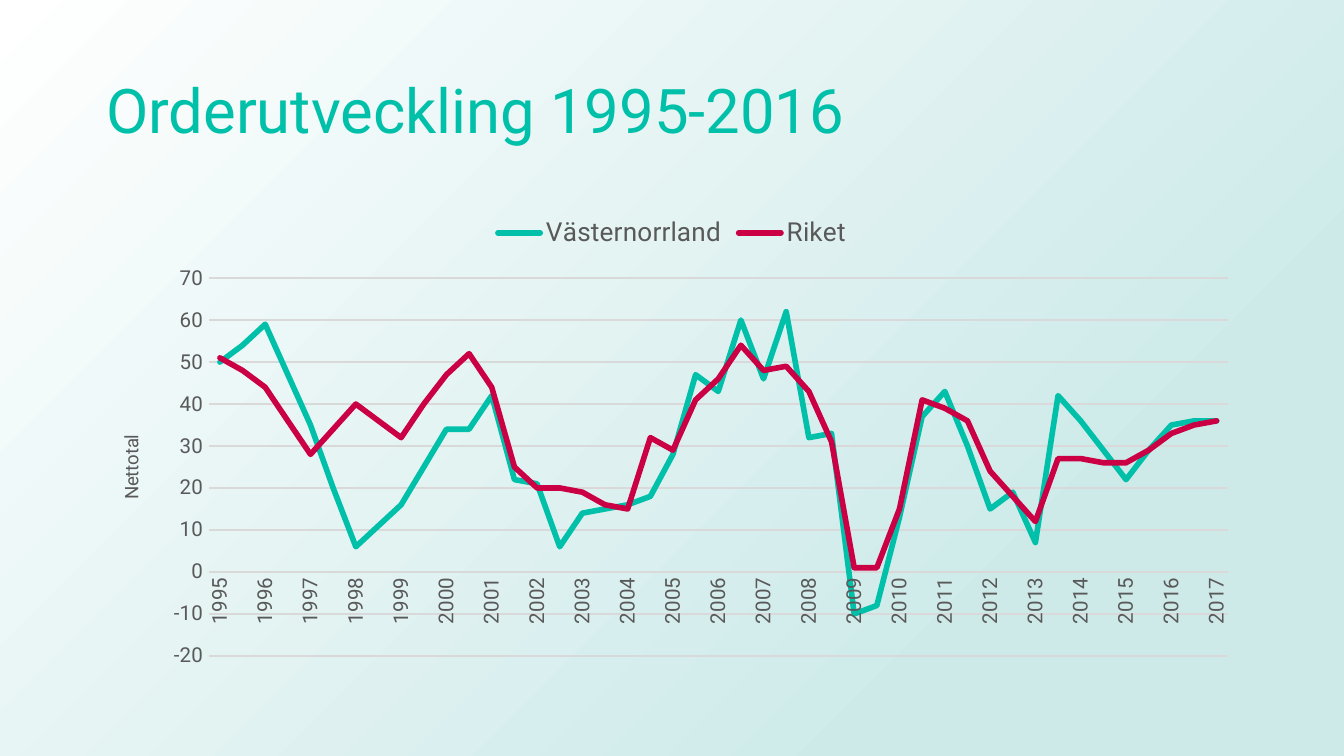
import pptx
import pptx.chart.data
import pptx.dml.color
import pptx.enum.chart
import pptx.enum.shapes
import pptx.enum.text
import pptx.oxml
import pptx.oxml.ns
import pptx.util
from pptx.util import Inches

TITLE = "Orderutveckling 1995-2016"
AXIS_TITLE = "Nettotal"
FONT = "Roboto"
TEAL, RED, GREY, GRID = "00C0A9", "CB0044", "595959", "D9D9D9"
GRADIENT = [(0.23, "CDEAE9"), (1, "FFFFFF")]
WIDTH = 10
HEIGHT = WIDTH * 9 / 16
LEFT, CONTENT_WIDTH = 0.69, 8.62

# Two values per year, the last year has one
SERIES = [
    ("Västernorrland", TEAL, [
        50, 54, 59, 47, 35, 20, 6, 11, 16, 25, 34, 34, 42, 22, 21,
        6, 14, 15, 16, 18, 28, 47, 43, 60, 46, 62, 32, 33, -10, -8,
        13, 37, 43, 30, 15, 19, 7, 42, 36, 29, 22, 29, 35, 36, 36]),
    ("Riket", RED, [
        51, 48, 44, 36, 28, 34, 40, 36, 32, 40, 47, 52, 44, 25, 20,
        20, 19, 16, 15, 32, 29, 41, 46, 54, 48, 49, 43, 31, 1, 1,
        15, 41, 39, 36, 24, 18, 12, 27, 27, 26, 26, 29, 33, 35, 36]),
]
YEARS = [str(1995 + i // 2) for i in range(len(SERIES[0][2]))]


def rgb(value):
    return pptx.dml.color.RGBColor.from_string(value)


def set_font(font, size, color=GREY):
    font.size = pptx.util.Pt(size)
    font.name = FONT
    font.bold = False
    font.color.rgb = rgb(color)


def set_line(line, color, width):
    line.color.rgb = rgb(color)
    line.width = pptx.util.Pt(width)


def write(tf, text, size, color=GREY, spacing=None):
    tf.text = text
    p = tf.paragraphs[0]
    p.alignment = pptx.enum.text.PP_ALIGN.LEFT
    p.line_spacing = spacing
    set_font(p.runs[0].font, size, color)


def turn_upright(element):
    """Rotate the text of a chart element to read from bottom to top."""
    body = element.find(".//" + pptx.oxml.ns.qn("a:bodyPr"))
    body.set("rot", "-5400000")
    body.set("vert", "horz")


def layout(x, y, w=None, h=None):
    """Return a manual chart layout in fractions of the chart area."""
    target = '<c:layoutTarget val="inner"/>' if w else ""
    size = f'<c:w val="{w}"/><c:h val="{h}"/>' if w else ""
    return pptx.oxml.parse_xml(
        f'<c:layout {pptx.oxml.ns.nsdecls("c")}><c:manualLayout>{target}'
        '<c:xMode val="edge"/><c:yMode val="edge"/>'
        f'<c:x val="{x}"/><c:y val="{y}"/>{size}</c:manualLayout></c:layout>')


def place(element, new_layout, after=None):
    """Put a layout into a chart element, after the given child or first."""
    for old in element.findall(pptx.oxml.ns.qn("c:layout")):
        element.remove(old)
    if after is None:
        element.insert(0, new_layout)
    else:
        element.find(pptx.oxml.ns.qn(after)).addnext(new_layout)


def add_background(s):
    sp = s.shapes.add_shape(pptx.enum.shapes.MSO_SHAPE.RECTANGLE,
                            0, 0, Inches(WIDTH), Inches(HEIGHT))
    sp.shadow.inherit = False
    sp.line.fill.background()
    sp.fill.gradient()
    for stop, (position, color) in zip(sp.fill.gradient_stops, GRADIENT):
        stop.position = position
        stop.color.rgb = rgb(color)
    grad = sp.element.spPr.find(pptx.oxml.ns.qn("a:gradFill"))
    grad.remove(grad.find(pptx.oxml.ns.qn("a:lin")))
    grad.append(pptx.oxml.parse_xml(
        f'<a:path {pptx.oxml.ns.nsdecls("a")} path="circle">'
        '<a:fillToRect l="100000" t="100000"/></a:path>'))
    s.shapes.element.insert(2, sp.element)


def add_title(s):
    sp = s.shapes.title
    sp.left, sp.top = Inches(LEFT), Inches(0.3)
    sp.width, sp.height = Inches(CONTENT_WIDTH), Inches(1.09)
    tf = sp.text_frame
    tf.auto_size = pptx.enum.text.MSO_AUTO_SIZE.NONE
    tf.vertical_anchor = pptx.enum.text.MSO_ANCHOR.MIDDLE
    write(tf, TITLE, 33, TEAL, spacing=0.9)


def add_line_chart(s):
    data = pptx.chart.data.CategoryChartData(number_format="0")
    data.categories = YEARS
    for name, _, values in SERIES:
        data.add_series(name, values)
    chart = s.shapes.add_chart(
        pptx.enum.chart.XL_CHART_TYPE.LINE, Inches(LEFT), Inches(1.5),
        Inches(CONTENT_WIDTH), Inches(3.56), data).chart
    set_font(chart.font, 11)
    chart.has_title = False
    chart.has_legend = True
    chart.legend.position = pptx.enum.chart.XL_LEGEND_POSITION.TOP
    chart.legend.include_in_layout = False
    set_font(chart.legend.font, 14)

    plot = chart.plots[0]
    plot.vary_by_categories = False
    for series, (_, color, _) in zip(plot.series, SERIES):
        series.smooth = False
        set_line(series.format.line, color, 3)
        series._element.find(".//" + pptx.oxml.ns.qn("a:ln")).set("cap", "rnd")

    years, values = chart.category_axis, chart.value_axis
    for axis in (years, values):
        axis.major_tick_mark = pptx.enum.chart.XL_TICK_MARK.NONE
        axis.minor_tick_mark = pptx.enum.chart.XL_TICK_MARK.NONE
        set_font(axis.tick_labels.font, 11)
    set_line(years.format.line, GRID, 0.75)
    turn_upright(years._element)
    years._element.find(pptx.oxml.ns.qn("c:noMultiLvlLbl")).addprevious(
        pptx.oxml.parse_xml(
            f'<c:tickLblSkip {pptx.oxml.ns.nsdecls("c")} val="2"/>'))

    values.minimum_scale, values.maximum_scale = -20, 70
    values.major_unit = 10
    values.tick_labels.number_format = "0"
    values.tick_labels.number_format_is_linked = False
    values.format.line.fill.background()
    set_line(values.major_gridlines.format.line, GRID, 0.75)
    write(values.axis_title.text_frame, AXIS_TITLE, 10)
    turn_upright(values.axis_title._element)

    place(values.axis_title._element, layout(0.02, 0.48), after="c:tx")
    place(plot._element.getparent(), layout(0.1, 0.16, 0.88, 0.79))


prs = pptx.Presentation()
prs.slide_width, prs.slide_height = Inches(WIDTH), Inches(HEIGHT)
s = prs.slides.add_slide(prs.slide_layouts[5])
add_background(s)
add_title(s)
add_line_chart(s)
prs.save("out.pptx")
